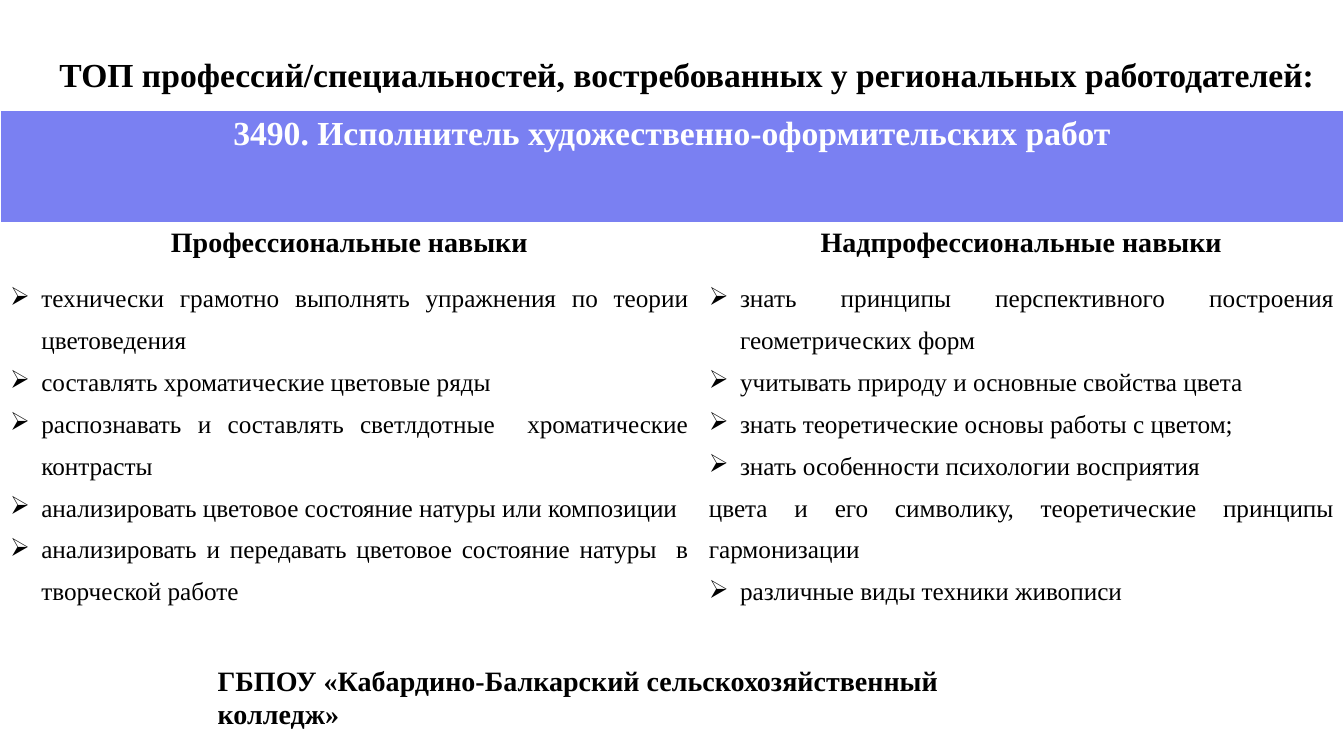
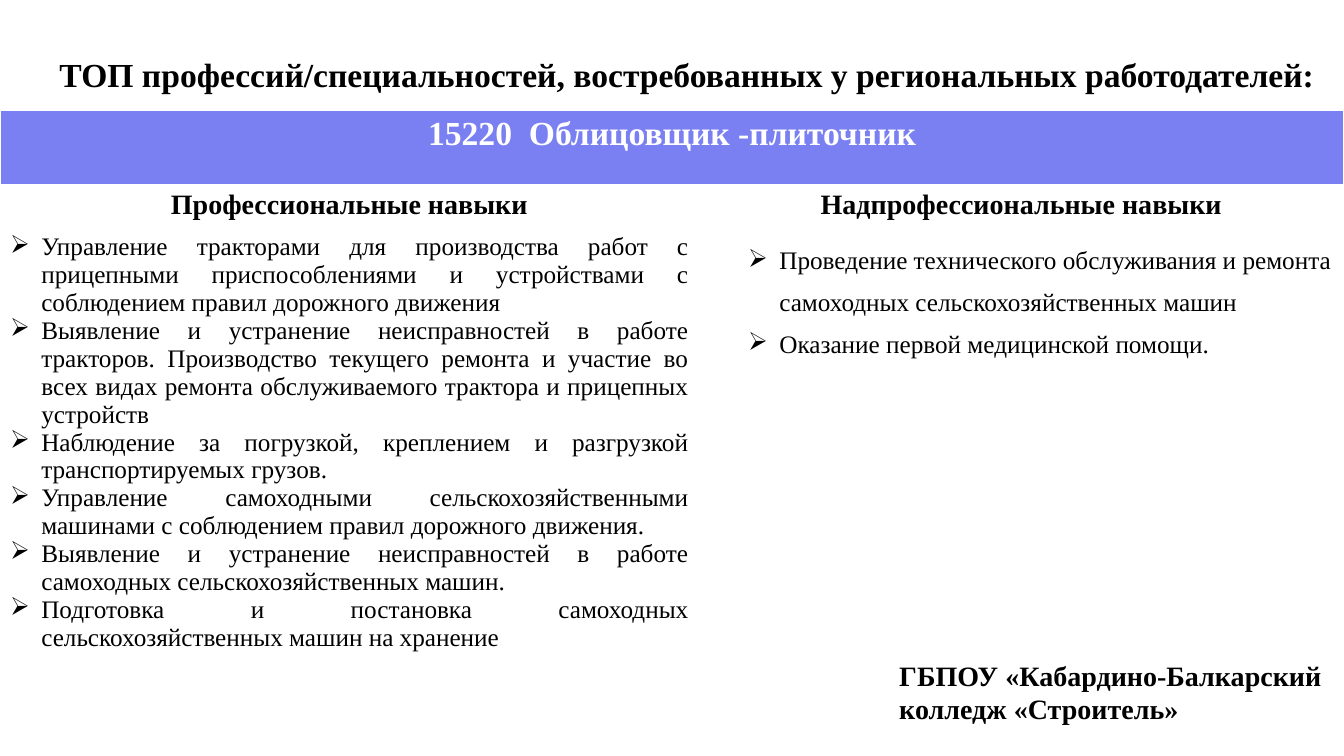
from lxml.etree import SubElement
from pptx import Presentation
from pptx.dml.color import RGBColor
from pptx.enum.text import MSO_AUTO_SIZE, PP_ALIGN
from pptx.oxml.ns import qn
from pptx.util import Inches, Pt

BLACK = RGBColor(0x00, 0x00, 0x00)
WHITE = RGBColor(0xFF, 0xFF, 0xFF)
VIOLET = RGBColor(0x7A, 0x80, 0xF2)
FONT = "Times New Roman"
HEADING = "ТОП профессий/специальностей, востребованных у региональных работодателей:"
COLUMN_HEADS = ("Профессиональные навыки", "Надпрофессиональные навыки")
COLUMN_WIDTHS = (6.93, 6.4)
HEADS_HEIGHT = 0.43
HANGING = 0.31


def set_font(paragraph, size, bold=True, color=BLACK):
    font = paragraph.font
    font.name = FONT
    font.size = Pt(size)
    font.bold = bold
    font.color.rgb = color


def add_bullet(paragraph, indent):
    properties = paragraph._p.get_or_add_pPr()
    properties.set("marL", str(Inches(indent)))
    properties.set("indent", str(-Inches(HANGING)))
    SubElement(properties, qn("a:buChar")).set("char", "➢")


def add_label(slide, box, lines, size):
    frame = slide.shapes.add_textbox(*map(Inches, box)).text_frame
    frame.word_wrap = True
    frame.auto_size = MSO_AUTO_SIZE.SHAPE_TO_FIT_TEXT
    frame.text = "\n".join(lines)
    for paragraph in frame.paragraphs:
        set_font(paragraph, size)


def fill_head(cell, text, size, color=BLACK):
    cell.text = text
    paragraph = cell.text_frame.paragraphs[0]
    paragraph.alignment = PP_ALIGN.CENTER
    set_font(paragraph, size, color=color)


def fill_skills(cell, skills, spacing=1.0, align=PP_ALIGN.JUSTIFY,
                indent=HANGING, unmarked=()):
    cell.text = "\n".join(skills)
    for index, paragraph in enumerate(cell.text_frame.paragraphs):
        paragraph.alignment = align
        paragraph.line_spacing = spacing
        if index not in unmarked:
            add_bullet(paragraph, indent)
        set_font(paragraph, 18, bold=False)


def add_skills_table(slide, box, profession, band_height, columns):
    table = slide.shapes.add_table(3, 2, *map(Inches, box)).table
    table.first_row = False
    table.horz_banding = False
    for column, width in zip(table.columns, COLUMN_WIDTHS):
        column.width = Inches(width)
    heights = (band_height, HEADS_HEIGHT, box[3] - band_height - HEADS_HEIGHT)
    for row, height in zip(table.rows, heights):
        row.height = Inches(height)
    for cell in table.iter_cells():
        cell.fill.background()

    band = table.cell(0, 0)
    band.merge(table.cell(0, 1))
    band.fill.solid()
    band.fill.fore_color.rgb = VIOLET
    fill_head(band, profession, 24, WHITE)
    for index, (head, skills) in enumerate(zip(COLUMN_HEADS, columns)):
        fill_head(table.cell(1, index), head, 20)
        fill_skills(table.cell(2, index), **skills)


def add_profession_slide(deck, profession, band_height, table_height, columns,
                         college, college_box):
    slide = deck.slides.add_slide(deck.slide_layouts[6])
    add_label(slide, (0.49, 0.49, 13.12, 0.5), [HEADING], 24)
    add_skills_table(slide, (0, 1.1, 13.33, table_height), profession,
                     band_height, columns)
    add_label(slide, college_box, college, 20)


def main():
    deck = Presentation()
    deck.slide_width = Inches(13.33)
    deck.slide_height = Inches(7.5)

    add_profession_slide(
        deck, "3490. Исполнитель художественно-оформительских работ", 1.11, 5.19,
        (
            {"spacing": 1.5, "skills": (
                "технически грамотно выполнять упражнения по теории цветоведения",
                "составлять хроматические цветовые ряды",
                "распознавать и составлять светлдотные  хроматические контрасты",
                "анализировать цветовое состояние натуры или композиции",
                "анализировать и передавать цветовое состояние натуры  в творческой работе",
            )},
            {"spacing": 1.5, "unmarked": (4,), "skills": (
                "знать принципы перспективного построения геометрических форм",
                "учитывать природу и основные свойства цвета",
                "знать теоретические основы работы с цветом;",
                "знать особенности психологии восприятия",
                "цвета и его символику, теоретические принципы гармонизации",
                "различные виды техники живописи",
            )},
        ),
        ["ГБПОУ «Кабардино-Балкарский сельскохозяйственный колледж»"],
        (2.06, 6.53, 7.89, 0.77))

    add_profession_slide(
        deck, "15220  Облицовщик -плиточник", 0.73, 6.06,
        (
            {"skills": (
                "Управление тракторами для производства работ с прицепными "
                "приспособлениями и устройствами с соблюдением правил дорожного движения",
                "Выявление и устранение неисправностей в работе тракторов. "
                "Производство текущего ремонта и участие во всех видах ремонта "
                "обслуживаемого трактора и прицепных устройств",
                "Наблюдение за погрузкой, креплением и разгрузкой транспортируемых грузов.",
                "Управление самоходными сельскохозяйственными машинами "
                "с соблюдением правил дорожного движения.",
                "Выявление и устранение неисправностей в работе самоходных "
                "сельскохозяйственных машин.",
                "Подготовка и постановка самоходных сельскохозяйственных машин на хранение",
            )},
            {"spacing": 1.5, "align": PP_ALIGN.LEFT, "indent": 0.7, "skills": (
                "Проведение технического обслуживания и ремонта самоходных "
                "сельскохозяйственных машин",
                "Оказание первой медицинской помощи.",
            )},
        ),
        ["ГБПОУ «Кабардино-Балкарский", "колледж «Строитель»"],
        (8.82, 6.48, 6.81, 0.77))

    deck.save("out.pptx")


if __name__ == "__main__":
    main()
